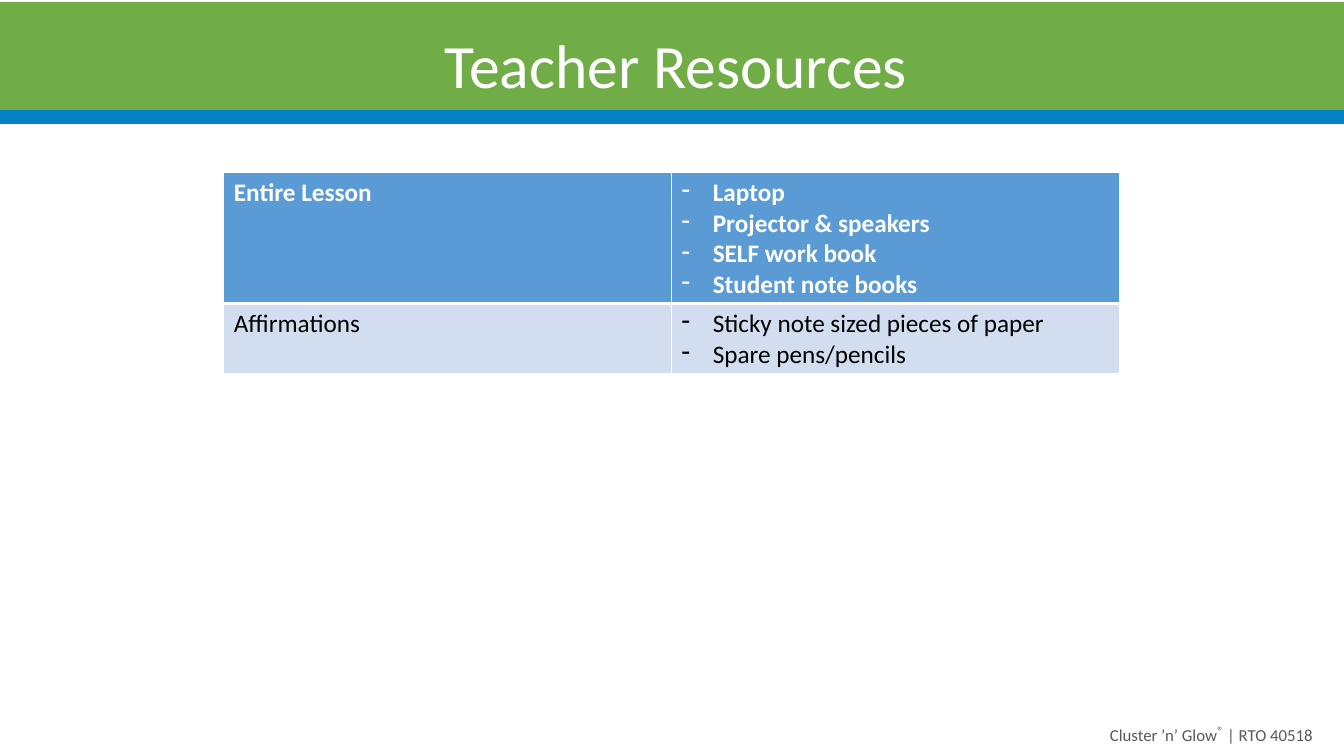
from lxml.etree import SubElement
from pptx import Presentation
from pptx.dml.color import RGBColor
from pptx.enum.shapes import MSO_SHAPE
from pptx.enum.text import MSO_ANCHOR, MSO_AUTO_SIZE, PP_ALIGN
from pptx.oxml import parse_xml
from pptx.oxml.ns import nsdecls, qn
from pptx.util import Inches, Pt

# Content
TITLE = "Teacher Resources"
FOOTER = [("Cluster ’n’ Glow", 12), ("®", 15), (" | RTO 40518", 12)]
RESOURCES = [
    ("Entire Lesson", ["Laptop", "Projector & speakers",
                       "SELF work book", "Student note books"]),
    ("Affirmations", ["Sticky note sized pieces of paper",
                      "Spare pens/pencils"]),
]
BANDS = [(1.09, 0.14, "0382C5"), (0.02, 1.07, "70AD47")]  # top, height, fill
ROW_STYLES = [("5B9BD5", "FFFFFF", True), ("D2DEEF", "000000", False)]
ROW_HEIGHTS = [1.3, 0.7]
SLIDE_W, SLIDE_H = 13.33, 7.5
TABLE_LEFT, TABLE_TOP, COL_W = 2.22, 1.71, 4.44


def rgb(color):
    return RGBColor.from_string(color)


def style(r, size, color, bold=False):
    r.font.name, r.font.size, r.font.bold = "Calibri", Pt(size), bold
    r.font.color.rgb = rgb(color)


def add_dash(p):
    pPr = p._p.get_or_add_pPr()
    pPr.set("marL", str(Inches(0.31)))
    pPr.set("indent", str(-Inches(0.31)))
    SubElement(pPr, qn("a:buChar")).set("char", "-")


def set_borders(cell, widths):
    tcPr = cell._tc.get_or_add_tcPr()
    for i, (side, width) in enumerate(zip("LRTB", widths)):
        tcPr.insert(i, parse_xml(
            f'<a:ln{side} {nsdecls("a")} w="{Pt(width)}"><a:solidFill>'
            f'<a:srgbClr val="FFFFFF"/></a:solidFill></a:ln{side}>'))


prs = Presentation()
prs.slide_width, prs.slide_height = Inches(SLIDE_W), Inches(SLIDE_H)
s = prs.slides.add_slide(prs.slide_layouts[6])

# Footer
sp = s.shapes.add_textbox(Inches(10.69), Inches(7.1), Inches(2.43), Inches(0.35))
tf = sp.text_frame
tf.word_wrap = False
tf.auto_size = MSO_AUTO_SIZE.SHAPE_TO_FIT_TEXT
p = tf.paragraphs[0]
p.alignment = PP_ALIGN.RIGHT
for text, size in FOOTER:
    r = p.add_run()
    r.text = text
    style(r, size, "595959")
    if text == "®":
        r._r.get_or_add_rPr().set("baseline", "30000")

# Header bands
for top, height, fill in BANDS:
    sp = s.shapes.add_shape(MSO_SHAPE.RECTANGLE, 0, Inches(top),
                            prs.slide_width, Inches(height))
    sp.shadow.inherit = False
    sp.fill.solid()
    sp.fill.fore_color.rgb = rgb(fill)
    sp.line.fill.background()

# Title
sp = s.shapes.add_textbox(Inches(2.51), Inches(0.19), Inches(8.39), Inches(0.89))
tf = sp.text_frame
tf.word_wrap = True
tf.vertical_anchor = MSO_ANCHOR.MIDDLE
p = tf.paragraphs[0]
p.text, p.alignment = TITLE, PP_ALIGN.CENTER
style(p.runs[0], 44, "FFFFFF")

# Resource table
table = s.shapes.add_table(len(RESOURCES), 2, Inches(TABLE_LEFT), Inches(TABLE_TOP),
                           Inches(2 * COL_W), Inches(sum(ROW_HEIGHTS))).table
for col in table.columns:
    col.width = Inches(COL_W)
for i, (topic, items) in enumerate(RESOURCES):
    table.rows[i].height = Inches(ROW_HEIGHTS[i])
    fill, color, bold = ROW_STYLES[i]
    for j, lines in enumerate([[topic], items]):
        cell = table.cell(i, j)
        cell.fill.solid()
        cell.fill.fore_color.rgb = rgb(fill)
        set_borders(cell, (1, 1, 1, 3) if i == 0 else (1, 1, 3, 1))
        cell.text_frame.text = "\n".join(lines)
        for p in cell.text_frame.paragraphs:
            if j == 1:
                add_dash(p)
            style(p.runs[0], 18, color, bold)

prs.save("out.pptx")
